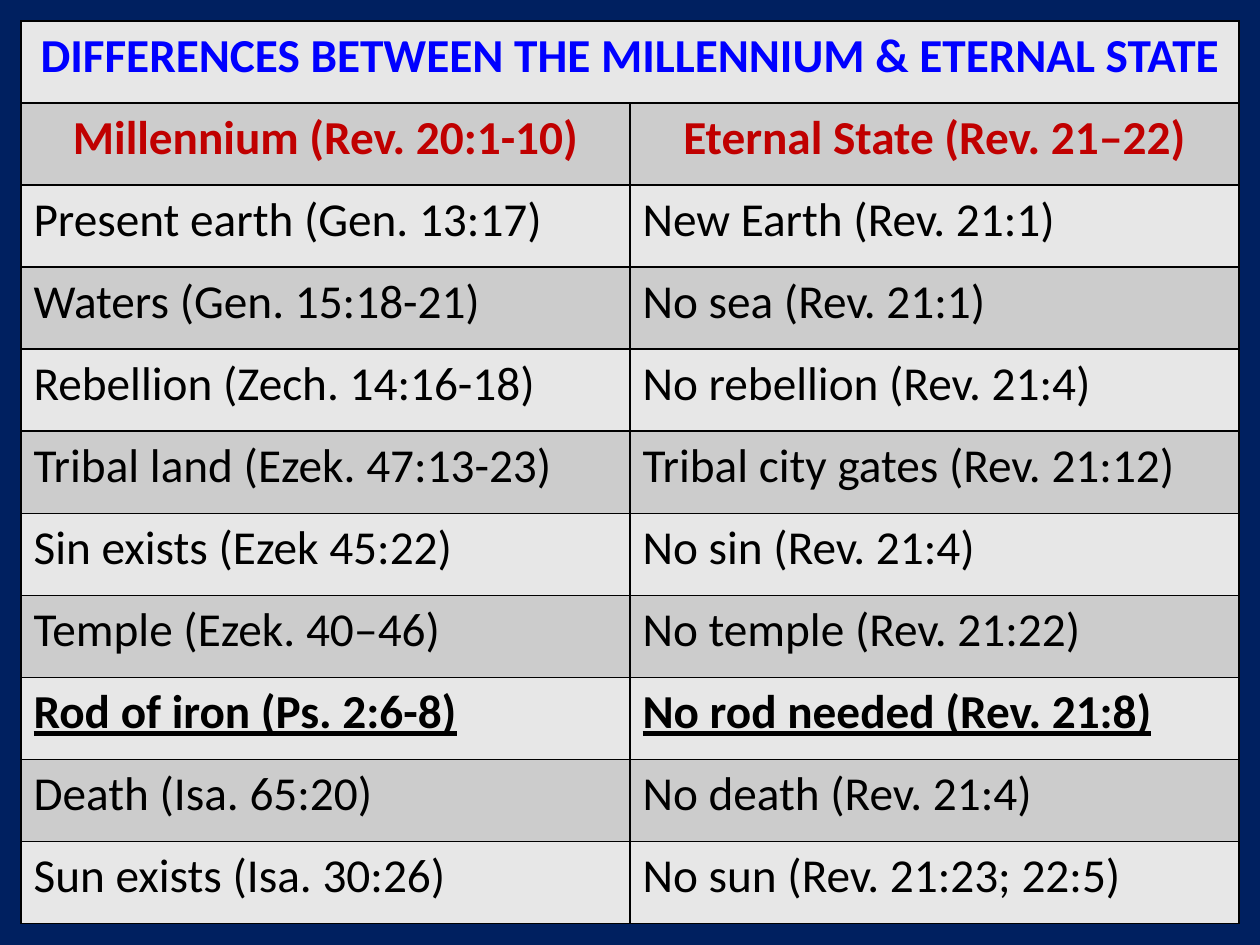
"""Build a slide with a table contrasting the Millennium and the Eternal State."""
from dataclasses import dataclass

from lxml.etree import SubElement
from pptx import Presentation
from pptx.dml.color import RGBColor
from pptx.enum.text import PP_ALIGN
from pptx.oxml.ns import qn
from pptx.util import Pt


@dataclass(frozen=True)
class Theme:
    background: str = "002060"
    bands: tuple = ("E7E7E7", "CCCCCC")
    title: str = "0000FF"
    heading: str = "C00000"
    body: str = "000000"
    border: str = "000000"
    border_width: int = 1
    font: str = "Calibri"
    size: int = 27
    paragraph_gap: int = 12


THEME = Theme()
SLIDE_WIDTH, SLIDE_HEIGHT = 720, 540
MARGIN = 12
TITLE = "DIFFERENCES BETWEEN THE MILLENNIUM & ETERNAL STATE"
HEADINGS = ("Millennium (Rev. 20:1-10)", "Eternal State (Rev. 21‒22)")
CONTRASTS = [
    ("Present earth (Gen. 13:17)", "New Earth (Rev. 21:1)"),
    ("Waters (Gen. 15:18-21)", "No sea (Rev. 21:1)"),
    ("Rebellion (Zech. 14:16-18)", "No rebellion (Rev. 21:4)"),
    ("Tribal land (Ezek. 47:13-23)", "Tribal city gates (Rev. 21:12)"),
    ("Sin exists (Ezek 45:22)", "No sin (Rev. 21:4)"),
    ("Temple (Ezek. 40‒46)", "No temple (Rev. 21:22)"),
    ("Rod of iron (Ps. 2:6-8)", "No rod needed (Rev. 21:8)"),
    ("Death (Isa. 65:20)", "No death (Rev. 21:4)"),
    ("Sun exists (Isa. 30:26)", "No sun (Rev. 21:23; 22:5)"),
]
EMPHASIZED = "Rod of iron (Ps. 2:6-8)"


def paint_background(slide):
    fill = slide.background.fill
    fill.solid()
    fill.fore_color.rgb = RGBColor.from_string(THEME.background)


def add_comparison_table(slide, row_count):
    width, height = SLIDE_WIDTH - 2 * MARGIN, SLIDE_HEIGHT - 2 * MARGIN
    comparison = slide.shapes.add_table(
        row_count, len(HEADINGS), Pt(MARGIN), Pt(MARGIN), Pt(width), Pt(height)
    ).table
    for row_index, row in enumerate(comparison.rows):
        row.height = Pt(height / row_count)
        for cell in row.cells:
            cell.fill.solid()
            band = THEME.bands[row_index % len(THEME.bands)]
            cell.fill.fore_color.rgb = RGBColor.from_string(band)
            add_borders(cell)
    return comparison


def add_borders(cell):
    properties = cell._tc.get_or_add_tcPr()
    for position, side in enumerate(("lnL", "lnR", "lnT", "lnB")):
        border = SubElement(properties, qn(f"a:{side}"), w=str(Pt(THEME.border_width)))
        SubElement(SubElement(border, qn("a:solidFill")), qn("a:srgbClr"), val=THEME.border)
        properties.insert(position, border)


def write_cell(cell, wording, color, centered=False, bold=False, underline=False):
    cell.text_frame.text = wording
    paragraph = cell.text_frame.paragraphs[0]
    paragraph.alignment = PP_ALIGN.CENTER if centered else PP_ALIGN.LEFT
    paragraph.space_before = paragraph.space_after = Pt(THEME.paragraph_gap)
    font = paragraph.runs[0].font
    font.name, font.size = THEME.font, Pt(THEME.size)
    font.bold, font.underline = bold, underline
    font.color.rgb = RGBColor.from_string(color)


def main():
    presentation = Presentation()
    presentation.slide_width, presentation.slide_height = Pt(SLIDE_WIDTH), Pt(SLIDE_HEIGHT)
    slide = presentation.slides.add_slide(presentation.slide_layouts[6])
    paint_background(slide)

    comparison = add_comparison_table(slide, len(CONTRASTS) + 2)
    title = comparison.cell(0, 0)
    title.merge(comparison.cell(0, 1))
    write_cell(title, TITLE, THEME.title, centered=True, bold=True)
    for column, heading in enumerate(HEADINGS):
        write_cell(comparison.cell(1, column), heading, THEME.heading, centered=True, bold=True)
    for row, contrast in enumerate(CONTRASTS, start=2):
        stressed = EMPHASIZED in contrast
        for column, wording in enumerate(contrast):
            write_cell(comparison.cell(row, column), wording, THEME.body,
                       bold=stressed, underline=stressed)

    presentation.save("out.pptx")


if __name__ == "__main__":
    main()
